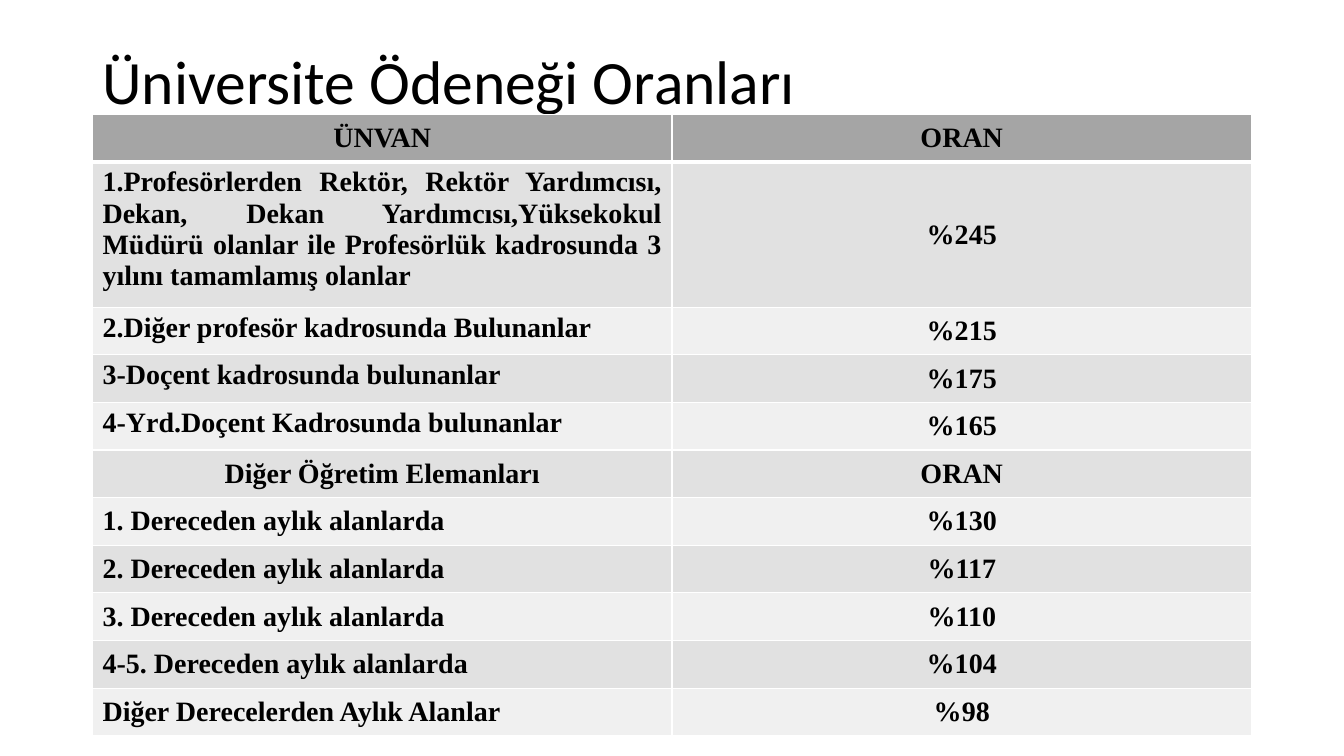
from lxml.etree import SubElement
from pptx import Presentation
from pptx.dml.color import RGBColor
from pptx.enum.text import MSO_ANCHOR, PP_ALIGN
from pptx.oxml.ns import qn
from pptx.util import Cm, Pt

CENTER, LEFT, JUSTIFY = PP_ALIGN.CENTER, PP_ALIGN.LEFT, PP_ALIGN.JUSTIFY
TOP, MIDDLE = MSO_ANCHOR.TOP, MSO_ANCHOR.MIDDLE

# Label, rate, label alignment, label anchor
ROWS = [
    ("ÜNVAN", "ORAN", CENTER, MIDDLE),
    ("1.Profesörlerden Rektör, Rektör Yardımcısı, Dekan, Dekan "
     "Yardımcısı,Yüksekokul Müdürü olanlar ile Profesörlük kadrosunda 3 "
     "yılını tamamlamış olanlar", "%245", JUSTIFY, TOP),
    ("2.Diğer profesör kadrosunda Bulunanlar", "%215", LEFT, TOP),
    ("3-Doçent kadrosunda bulunanlar", "%175", LEFT, TOP),
    ("4-Yrd.Doçent Kadrosunda bulunanlar", "%165", LEFT, TOP),
    ("Diğer Öğretim Elemanları", "ORAN", CENTER, MIDDLE),
    ("1. Dereceden aylık alanlarda", "%130", LEFT, MIDDLE),
    ("2. Dereceden aylık alanlarda", "%117", LEFT, MIDDLE),
    ("3. Dereceden aylık alanlarda", "%110", LEFT, MIDDLE),
    ("4-5. Dereceden aylık alanlarda", "%104", LEFT, MIDDLE),
    ("Diğer Derecelerden Aylık Alanlar", "%98", LEFT, MIDDLE),
]


def color(value):
    return RGBColor.from_string(value)


def write(tf, text, font="Times New Roman", size=20, bold=False,
          align=LEFT, spacing=None):
    p = tf.paragraphs[0]
    p.alignment = align
    p.line_spacing = spacing
    r = p.add_run()
    r.text = text
    r.font.name, r.font.size, r.font.bold = font, Pt(size), bold
    r.font.color.rgb = color("000000")


class Deck:
    header, bands, border = "A5A5A5", ("F0F0F0", "E1E1E1"), "FFFFFF"

    def __init__(self):
        self.prs = Presentation()
        self.prs.slide_width, self.prs.slide_height = Cm(33.87), Cm(19.05)
        self.s = self.prs.slides.add_slide(self.prs.slide_layouts[6])

    def title(self, text, x, y, w, h):
        sp = self.s.shapes.add_textbox(Cm(x), Cm(y), Cm(w), Cm(h))
        tf = sp.text_frame
        tf.word_wrap = True
        tf.vertical_anchor = MIDDLE
        write(tf, text, font="Calibri", size=44, spacing=0.9)

    def table(self, rows, x, y, w, heights):
        table = self.s.shapes.add_table(len(rows), 2, Cm(x), Cm(y), Cm(w),
                                        Cm(sum(heights))).table
        for i, (label, rate, align, anchor) in enumerate(rows):
            table.rows[i].height = Cm(heights[i])
            fill = self.bands[i % 2] if i else self.header
            bottom = 1 if i else 3
            self.cell(table.cell(i, 0), label, fill, align, anchor, bottom)
            self.cell(table.cell(i, 1), rate, fill, CENTER, MIDDLE, bottom)

    def cell(self, cell, text, fill, align, anchor, bottom):
        # Borders come before the fill in the cell properties
        tcPr = cell._tc.get_or_add_tcPr()
        for side, width in (("L", 1), ("R", 1), ("T", 1), ("B", bottom)):
            ln = SubElement(tcPr, qn("a:ln" + side), w=str(Pt(width)))
            line = SubElement(ln, qn("a:solidFill"))
            SubElement(line, qn("a:srgbClr"), val=self.border)
        cell.fill.solid()
        cell.fill.fore_color.rgb = color(fill)
        cell.vertical_anchor = anchor
        write(cell.text_frame, text, bold=True, align=align)


def main():
    deck = Deck()
    # Heading
    deck.title("Üniversite Ödeneği Oranları", 2.33, 1.02, 29.21, 2.24)
    # Rates: the second row holds four lines, all others one
    heights = [3.66 if i == 1 else 1.2 for i in range(len(ROWS))]
    deck.table(ROWS, 2.33, 2.88, 29.21, heights)
    deck.prs.save("out.pptx")


if __name__ == "__main__":
    main()
